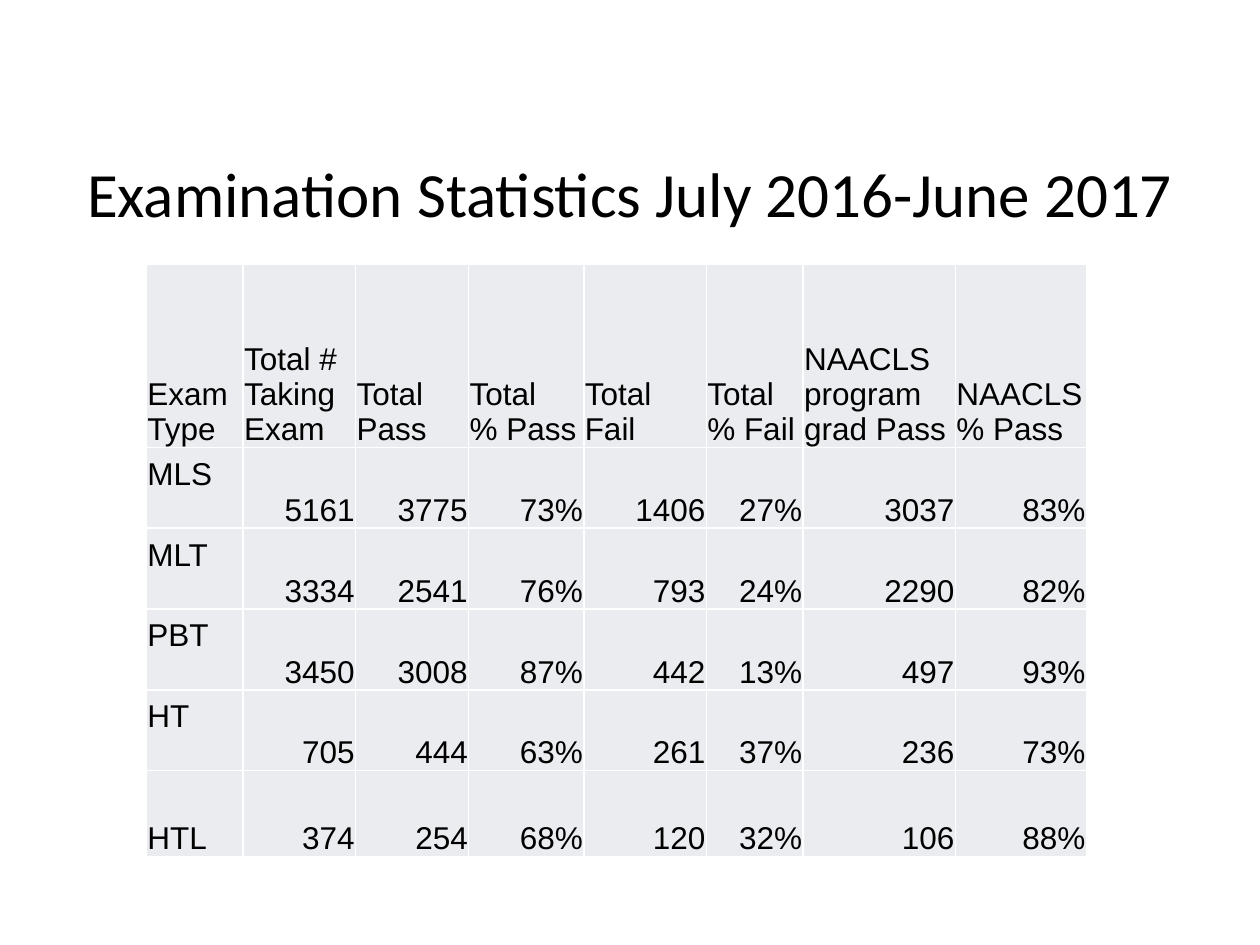
from lxml import etree
from pptx import Presentation
from pptx import util as u
from pptx.dml.color import RGBColor
from pptx.enum import text
from pptx.oxml.ns import qn

HEADINGS = ["Exam Type", "Total # Taking Exam", "Total Pass", "Total\n% Pass",
            "Total Fail", "Total\n% Fail", "NAACLS program grad Pass", "NAACLS % Pass"]
RESULTS = [
    ["MLS", "5161", "3775", "73%", "1406", "27%", "3037", "83%"],
    ["MLT", "3334", "2541", "76%", "793", "24%", "2290", "82%"],
    ["PBT", "3450", "3008", "87%", "442", "13%", "497", "93%"],
    ["HT", "705", "444", "63%", "261", "37%", "236", "73%"],
    ["HTL", "374", "254", "68%", "120", "32%", "106", "88%"],
]
COLUMN_WIDTHS = [1.95, 2.27, 2.28, 2.32, 2.47, 1.95, 3.07, 2.64]
ROW_HEIGHTS = [3.69] + [1.63] * 4 + [1.73]
RAISED_EXAMS = ("MLS", "MLT", "PBT", "HT")


def color(value):
    return RGBColor.from_string(value)


def style_paragraph(paragraph, font_name, size, align):
    paragraph.alignment = align
    paragraph.font.name = font_name
    paragraph.font.size = u.Pt(size)
    paragraph.font.bold = False
    paragraph.font.color.rgb = color("000000")


def add_borders(cell, line_color, width):
    properties = cell._tc.get_or_add_tcPr()
    for index, side in enumerate(("lnL", "lnR", "lnT", "lnB")):
        line = etree.Element(qn(f"a:{side}"), w=str(u.Pt(width)))
        fill = etree.SubElement(line, qn("a:solidFill"))
        etree.SubElement(fill, qn("a:srgbClr"), val=line_color)
        properties.insert(index, line)


def fill_cell(cell, wording, align):
    cell.text = wording
    cell.vertical_anchor = text.MSO_ANCHOR.BOTTOM
    cell.margin_left = cell.margin_right = cell.margin_top = u.Cm(0.02)
    cell.margin_bottom = u.Cm(0.73 if wording in RAISED_EXAMS else 0)
    cell.fill.solid()
    cell.fill.fore_color.rgb = color("EBECF0")
    add_borders(cell, "FFFFFF", 1)
    for paragraph in cell.text_frame.paragraphs:
        style_paragraph(paragraph, "Arial", 18, align)


def add_title(slide, left, top, width, height):
    frame = slide.shapes.add_textbox(
        u.Cm(left), u.Cm(top), u.Cm(width), u.Cm(height)).text_frame
    frame.word_wrap = True
    frame.vertical_anchor = text.MSO_ANCHOR.TOP
    heading = frame.paragraphs[0]
    heading.text = "Examination Statistics July 2016-June 2017"
    style_paragraph(heading, "Calibri", 36, text.PP_ALIGN.CENTER)


def add_statistics(slide, left, top, width, height):
    rows = [HEADINGS] + RESULTS
    statistics = slide.shapes.add_table(
        len(rows), len(HEADINGS),
        u.Cm(left), u.Cm(top), u.Cm(width), u.Cm(height)).table
    for column, share in zip(statistics.columns, COLUMN_WIDTHS):
        column.width = u.Cm(width * share / sum(COLUMN_WIDTHS))
    for row, share in zip(statistics.rows, ROW_HEIGHTS):
        row.height = u.Cm(height * share / sum(ROW_HEIGHTS))
    for r, values in enumerate(rows):
        for c, wording in enumerate(values):
            align = text.PP_ALIGN.RIGHT if r and c else text.PP_ALIGN.LEFT
            fill_cell(statistics.cell(r, c), wording, align)


def main():
    deck = Presentation()
    deck.slide_width, deck.slide_height = u.Cm(25.4), u.Cm(19.05)
    slide = deck.slides.add_slide(deck.slide_layouts[6])
    add_title(slide, 1.27, 3, 22.86, 2.67)
    add_statistics(slide, 2.95, 5.33, 18.95, 11.94)
    deck.save("out.pptx")


if __name__ == "__main__":
    main()
